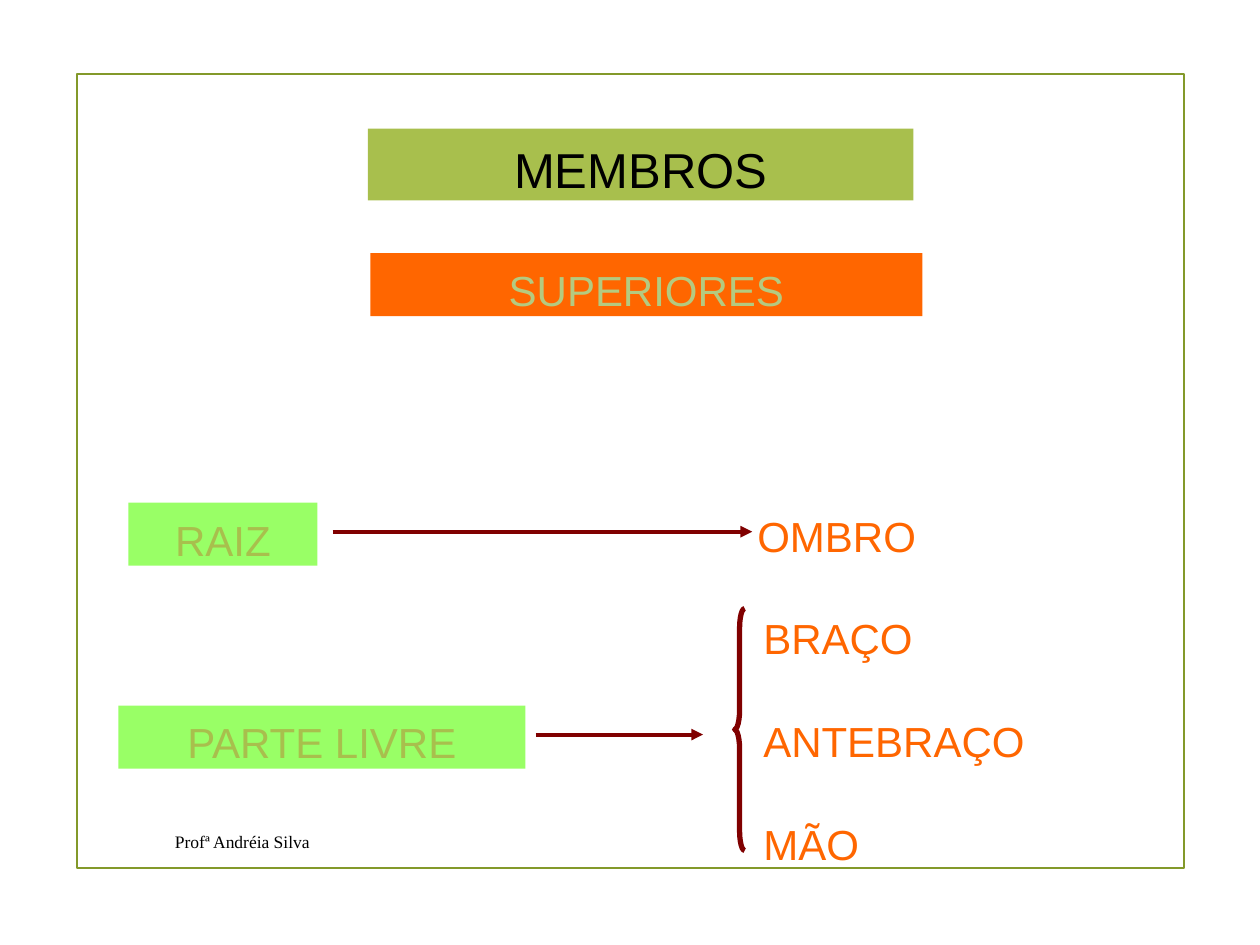
import pptx
import pptx.util
import pptx.dml.color
import pptx.enum.shapes
import pptx.enum.text
import pptx.oxml
import pptx.oxml.ns

Inches, Pt = pptx.util.Inches, pptx.util.Pt
SHAPES = pptx.enum.shapes.MSO_SHAPE
ALIGN = pptx.enum.text.PP_ALIGN
ANCHOR = pptx.enum.text.MSO_ANCHOR

COLORS = {"olive": "A8BF4D", "frame": "83992A", "orange": "FF6600", "sage": "B4CA80",
          "lime": "99FF66", "maroon": "800000", "black": "000000"}
TITLE = ("MEMBROS", (2.92, 1.02, 4.33, 0.57))
LABELS = [
    ("SUPERIORES", (2.94, 2.01, 4.38, 0.5), "orange", "sage"),
    ("RAIZ", (1.02, 3.99, 1.5, 0.5), "lime", "olive"),
    ("PARTE LIVRE", (0.94, 5.6, 3.23, 0.5), "lime", "olive"),
]
ROOT_PART = ("OMBRO", (5.63, 3.96, 2.02, 0.5))
FREE_PARTS = (["BRAÇO", "ANTEBRAÇO", "MÃO"], (5.96, 4.77, 2.46, 2.12))
AUTHOR = ("Profª Andréia Silva", (1.29, 6.52, 5.58, 0.31))
ARROWS = [(2.64, 5.97, 4.22), (4.25, 5.58, 5.83)]
FRAME = (0.61, 0.59, 8.79, 6.3)
BRACE = (5.83, 4.83, 0.08, 1.92)
BODY_FRAME = {"word_wrap": True, "vertical_anchor": ANCHOR.TOP,
              "margin_left": Inches(0.1), "margin_right": Inches(0.1),
              "margin_top": Inches(0.09), "margin_bottom": Inches(0.01)}
AUTHOR_FRAME = {"word_wrap": True, "vertical_anchor": ANCHOR.MIDDLE}


def rgb(name):
    return pptx.dml.color.RGBColor.from_string(COLORS[name])


def apply(target, values):
    for name, value in values.items():
        setattr(target, name, value)


def place(shape, box):
    apply(shape, dict(zip(("left", "top", "width", "height"), map(Inches, box))))


def write(shape, lines, color, size=24, font="Arial", align=ALIGN.CENTER, frame=BODY_FRAME, gap=0):
    text_frame = shape.text_frame
    apply(text_frame, frame)
    text_frame.text = "\n".join(lines)
    for index, paragraph in enumerate(text_frame.paragraphs):
        apply(paragraph, {"alignment": align, "line_spacing": 1.0,
                          "space_before": Pt(gap if index else 0)})
        apply(paragraph.font, {"name": font, "size": Pt(size), "bold": False})
        paragraph.font.color.rgb = rgb(color)


def fill(shape, color):
    shape.fill.solid()
    shape.fill.fore_color.rgb = rgb(color)


def stroke(shape, color, width):
    shape.line.color.rgb = rgb(color)
    shape.line.width = Pt(width)


def add_shape(slide, kind, box):
    shape = slide.shapes.add_shape(kind, *map(Inches, box))
    shape.shadow.inherit = False
    shape.fill.background()
    shape.line.fill.background()
    return shape


def add_text(slide, lines, box, color, **options):
    write(slide.shapes.add_textbox(*map(Inches, box)), lines, color, **options)


def add_arrow(slide, start, end, y):
    arrow = slide.shapes.add_connector(pptx.enum.shapes.MSO_CONNECTOR.STRAIGHT,
                                       Inches(start), Inches(y), Inches(end), Inches(y))
    stroke(arrow, "maroon", 2.25)
    head = pptx.oxml.parse_xml(f'<a:tailEnd {pptx.oxml.ns.nsdecls("a")} type="triangle"/>')
    effects = pptx.oxml.parse_xml(f'<a:effectLst {pptx.oxml.ns.nsdecls("a")}/>')
    arrow.line._get_or_add_ln().append(head)
    arrow._element.spPr.append(effects)


def main():
    """Build the slide about the parts of the upper limbs."""
    presentation = pptx.Presentation()
    apply(presentation, {"slide_width": Inches(10), "slide_height": Inches(7.5)})
    slide = presentation.slides.add_slide(presentation.slide_layouts[5])

    title, title_box = TITLE
    place(slide.shapes.title, title_box)
    fill(slide.shapes.title, "olive")
    write(slide.shapes.title, [title], "black", size=28)

    stroke(add_shape(slide, SHAPES.RECTANGLE, FRAME), "frame", 1.25)
    for text, box, background, color in LABELS:
        label = add_shape(slide, SHAPES.RECTANGLE, box)
        fill(label, background)
        write(label, [text], color)

    root, root_box = ROOT_PART
    add_text(slide, [root], root_box, "orange")
    parts, parts_box = FREE_PARTS
    add_text(slide, parts, parts_box, "orange", align=ALIGN.LEFT, gap=30)

    for arrow in ARROWS:
        add_arrow(slide, *arrow)
    brace = add_shape(slide, SHAPES.LEFT_BRACE, BRACE)
    brace.adjustments[0] = 1.92
    stroke(brace, "maroon", 3)

    author, author_box = AUTHOR
    add_text(slide, [author], author_box, "black", size=10, font="Times New Roman",
             align=ALIGN.LEFT, frame=AUTHOR_FRAME)
    presentation.save("out.pptx")


if __name__ == "__main__":
    main()
